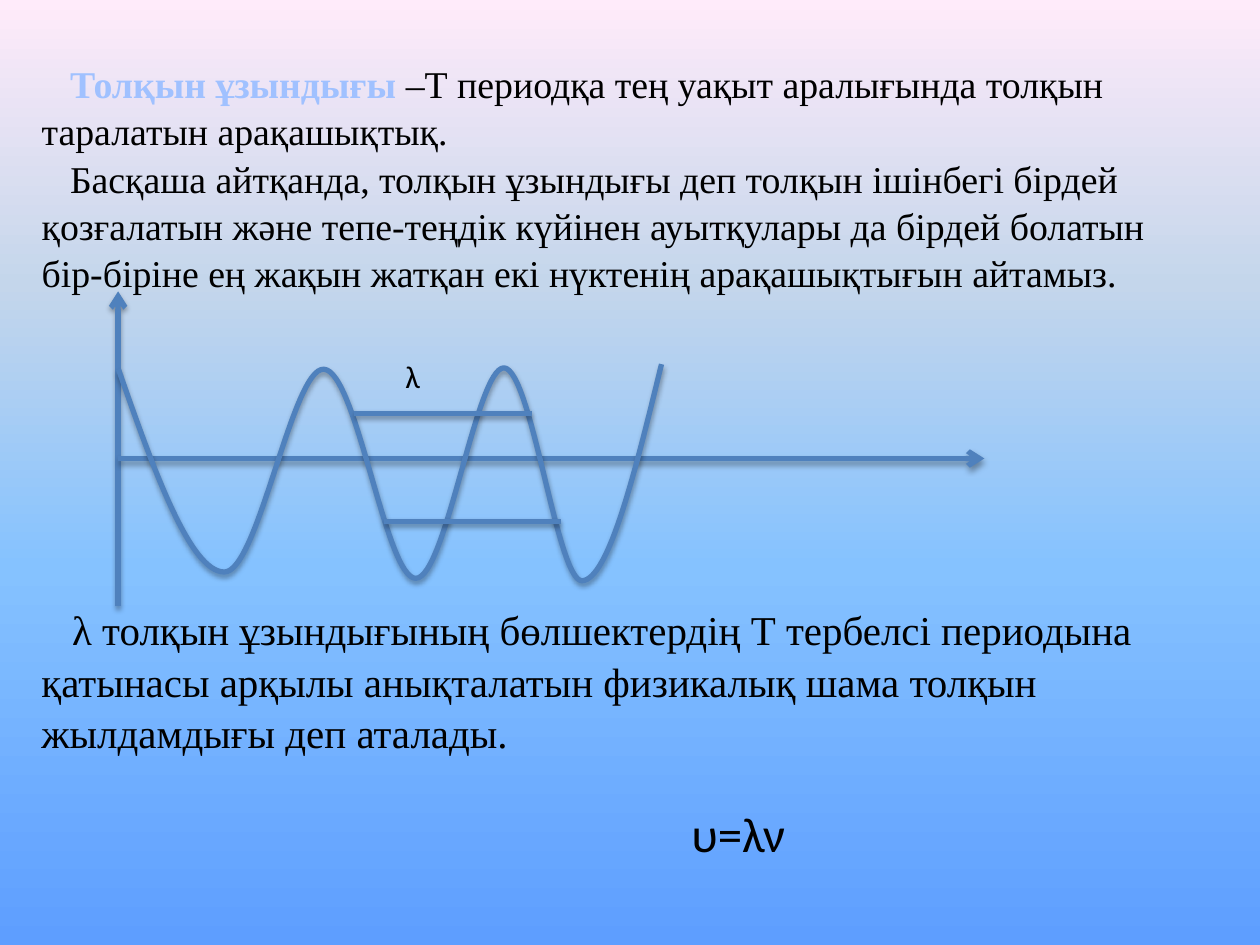
from copy import deepcopy
from dataclasses import dataclass
from itertools import chain

from lxml.etree import SubElement
from pptx import Presentation
from pptx.dml.color import RGBColor
from pptx.enum.shapes import MSO_CONNECTOR
from pptx.enum.text import MSO_ANCHOR, MSO_AUTO_SIZE, PP_ALIGN
from pptx.oxml.ns import qn
from pptx.util import Pt

SKY = [(0, "5E9EFF"), (0.4, "85C2FF"), (0.7, "C4D6EB"), (1, "FFEBFA")]
TERM = "Толқын ұзындығы "
DEFINITION = "–Т периодқа тең уақыт аралығында толқын таралатын арақашықтық."
RESTATEMENT = (
    "Басқаша айтқанда, толқын ұзындығы деп толқын ішінбегі бірдей қозғалатын "
    "және тепе-теңдік күйінен ауытқулары да бірдей болатын бір-біріне ең жақын "
    "жатқан екі нүктенің арақашықтығын айтамыз."
)
SPEED = (
    "λ толқын ұзындығының бөлшектердің Т тербелсі периодына қатынасы арқылы "
    "анықталатын физикалық шама толқын жылдамдығы деп аталады."
)
WAVE_START = (67.7, 211)
WAVE_CURVES = [
    [(87.8, 268.6), (108.7, 326.9), (128.2, 326.9)],
    [(147.6, 326.9), (167, 210.2), (185, 211)],
    [(203.8, 211.7), (220.3, 330.5), (237.6, 330.5)],
    [(254.9, 330.5), (272.2, 210.2), (288, 210.2)],
    [(303.8, 211), (318.2, 331.9), (332.6, 331.9)],
    [(347.8, 331.2), (362.9, 270), (378, 208.1)],
]


def color(value):
    return RGBColor.from_string(value)


@dataclass
class WaveSlide:
    slide: object
    serif: str = "Times New Roman"
    sans: str = "Calibri"
    ink: str = "000000"
    accent: str = "4F81BD"
    highlight: str = "A0C1FF"
    line_width: float = 3

    def background(self, stops):
        fill = self.slide.background.fill
        fill.gradient()
        fill.gradient_angle = 90
        stop_list = self.slide.element.find(".//" + qn("a:gsLst"))
        for _ in stops[len(stop_list):]:
            stop_list.append(deepcopy(stop_list[0]))
        for stop, (position, value) in zip(fill.gradient_stops, stops):
            stop.position = position
            stop.color.rgb = color(value)

    def place(self, box, left, top, width, height):
        box.left, box.top, box.width, box.height = map(Pt, (left, top, width, height))

    def passage(self, box, paragraphs, size, indent):
        frame = box.text_frame
        frame.word_wrap = True
        frame.auto_size = MSO_AUTO_SIZE.NONE
        frame.vertical_anchor = MSO_ANCHOR.MIDDLE
        for index, pieces in enumerate(paragraphs):
            para = frame.add_paragraph() if index else frame.paragraphs[0]
            para.alignment = PP_ALIGN.LEFT
            para.line_spacing = 1.04
            para.font.name = self.serif
            para.font.size = Pt(size)
            para.font.color.rgb = color(self.ink)
            properties = para._p.get_or_add_pPr()
            properties.set("marL", "0")
            properties.set("indent", str(Pt(indent)))
            for text, highlighted in pieces:
                span = para.add_run()
                span.text = text
                if highlighted:
                    span.font.bold = True
                    span.font.color.rgb = color(self.highlight)

    def title(self, area, paragraphs, size, indent):
        box = self.slide.shapes.title
        self.place(box, *area)
        self.passage(box, paragraphs, size, indent)

    def body(self, area, paragraphs, size, indent):
        box = self.slide.shapes.add_textbox(*map(Pt, area))
        self.passage(box, paragraphs, size, indent)

    def label(self, area, text, size):
        frame = self.slide.shapes.add_textbox(*map(Pt, area)).text_frame
        frame.word_wrap = True
        frame.auto_size = MSO_AUTO_SIZE.SHAPE_TO_FIT_TEXT
        para = frame.paragraphs[0]
        para.text = text
        para.font.name = self.sans
        para.font.size = Pt(size)
        para.font.color.rgb = color(self.ink)

    def stroke(self, shape):
        shape.line.color.rgb = color(self.accent)
        shape.line.width = Pt(self.line_width)
        effects = SubElement(shape.element.spPr, qn("a:effectLst"))
        shadow = SubElement(
            effects, qn("a:outerShdw"), blurRad=str(Pt(3.1)), dist=str(Pt(1.8)),
            dir="5400000", rotWithShape="0",
        )
        shade = SubElement(shadow, qn("a:srgbClr"), val=self.ink)
        SubElement(shade, qn("a:alpha"), val="35000")

    def line(self, start, end, arrow=False):
        connector = self.slide.shapes.add_connector(
            MSO_CONNECTOR.STRAIGHT, *map(Pt, start + end)
        )
        self.stroke(connector)
        if arrow:
            SubElement(connector.line._get_or_add_ln(), qn("a:tailEnd"), type="arrow")

    def curve(self, start, curves):
        builder = self.slide.shapes.build_freeform(*map(Pt, start))
        points = [tuple(map(Pt, point)) for point in chain.from_iterable(curves)]
        builder.add_line_segments(points, close=False)
        wave = builder.convert_to_shape()
        wave.fill.background()
        path = wave.element.find(".//" + qn("a:path"))
        segments = path.findall(qn("a:lnTo"))
        for first in range(0, len(segments), 3):
            bezier = SubElement(path, qn("a:cubicBezTo"))
            for segment in segments[first:first + 3]:
                bezier.append(segment[0])
                path.remove(segment)
        self.stroke(wave)


def main():
    deck = Presentation()
    deck.slide_width, deck.slide_height = Pt(720), Pt(540)
    page = WaveSlide(deck.slides.add_slide(deck.slide_layouts[5]))
    page.background(SKY)
    page.title(
        (16.6, 56.2, 667.4, 90),
        [[(TERM, True), (DEFINITION, False)], [(RESTATEMENT, False)]],
        21.6, 16.2,
    )
    page.line((67.5, 346.5), (67.5, 166.5), arrow=True)
    page.line((67.5, 262), (562.5, 262), arrow=True)
    page.curve(WAVE_START, WAVE_CURVES)
    page.line((219.6, 298), (320.4, 298))
    page.label((224.6, 200.2, 39.6, 29), "λ", 18)
    page.body((16.6, 343.4, 667.4, 90), [[(SPEED, False)]], 23.4, 17.55)
    page.label((388, 455.8, 129.6, 41), "υ=λν", 28)
    page.line((202.5, 236.2), (303.8, 236.2))
    deck.save("out.pptx")


if __name__ == "__main__":
    main()
